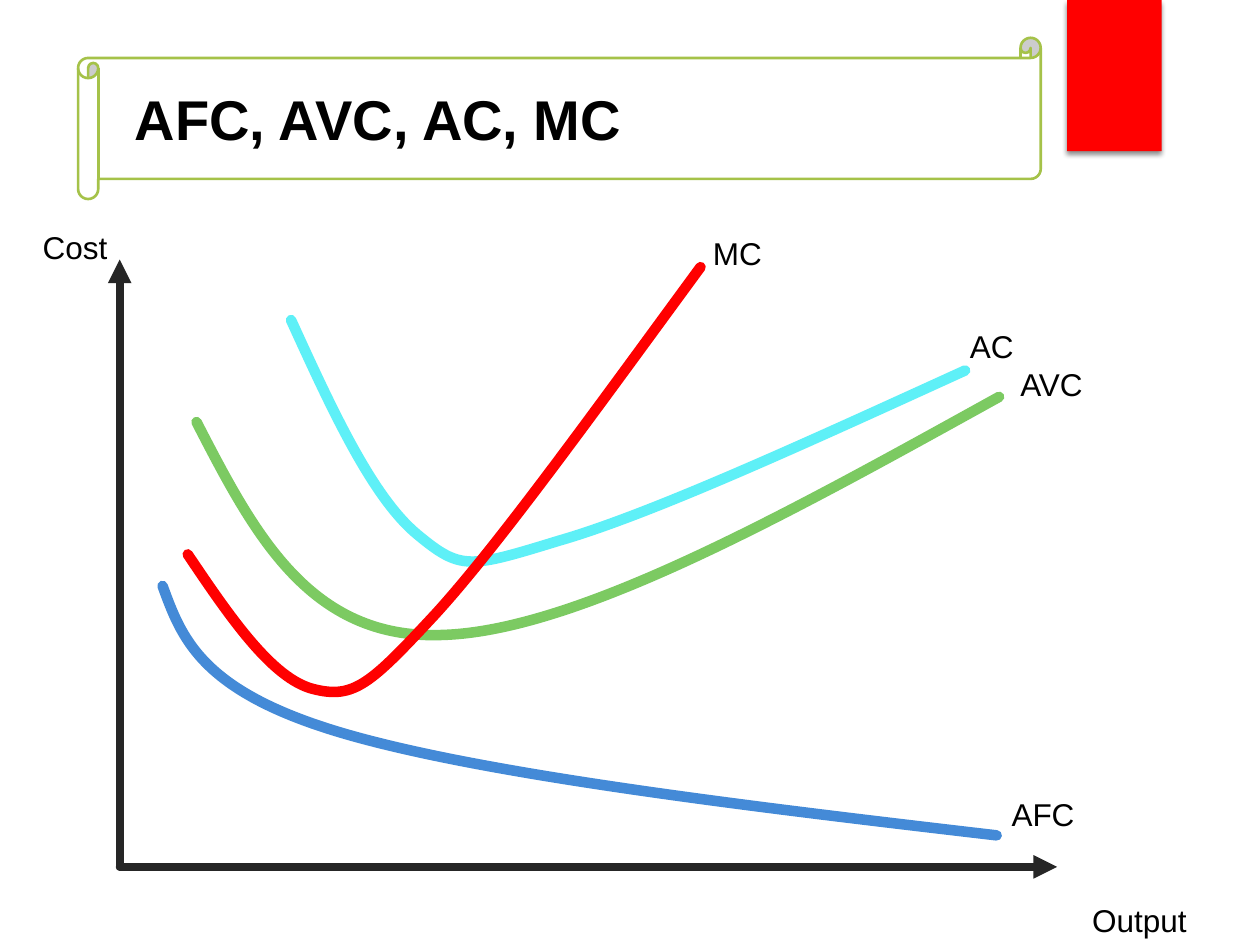
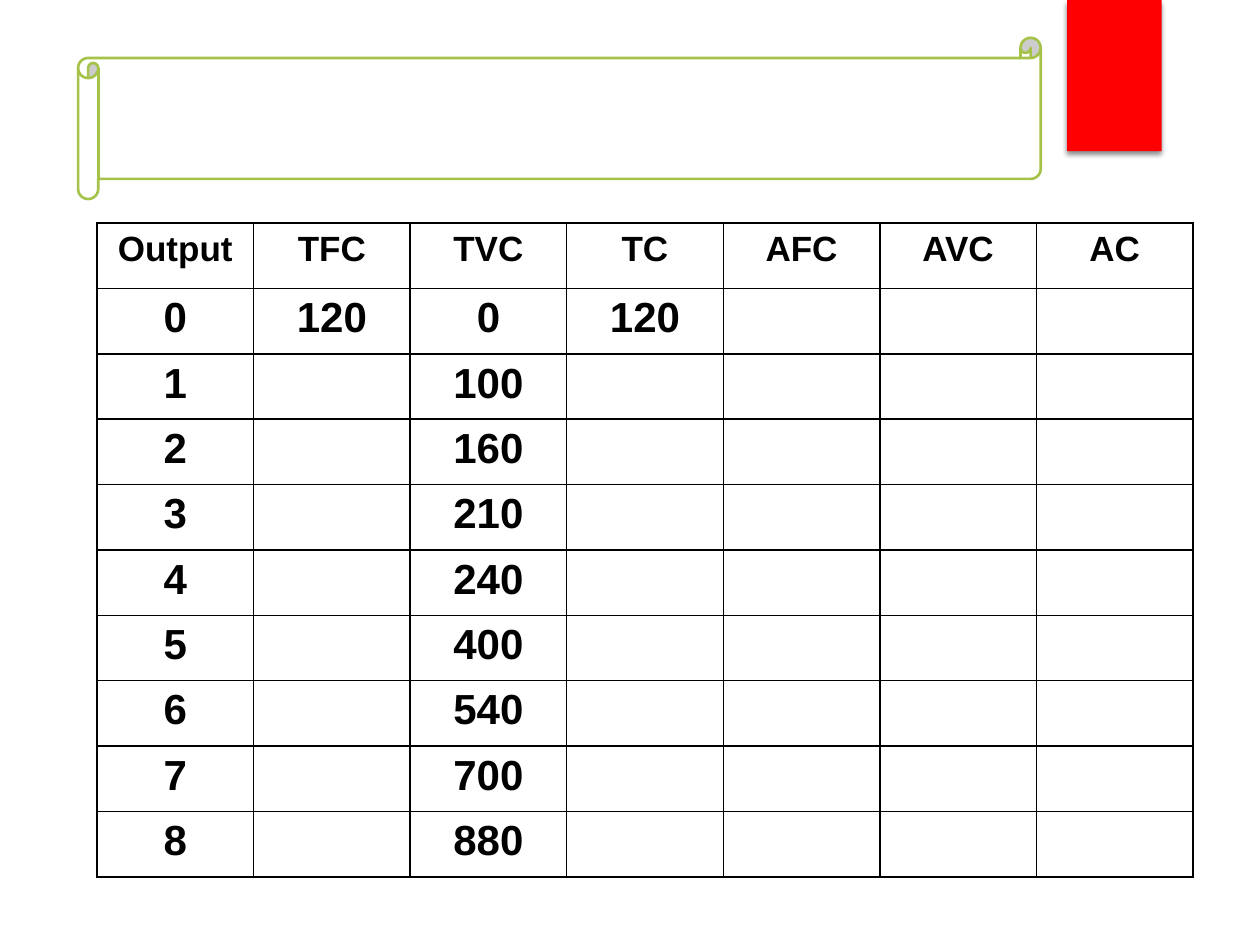
"""Build two slides on average and marginal cost: the curves and a table to fill in."""
import pptx
import pptx.util
import pptx.dml.color
import pptx.enum.shapes
import pptx.enum.text
import pptx.oxml
import lxml.etree
from pptx.oxml.ns import qn

WIDTH, HEIGHT = 10, 7.5
FONT = "Arial"
BLACK, WHITE, RED, GREEN, AXIS = "000000", "FFFFFF", "FF0000", "A5C249", "262626"
SCROLL = (0.62, 0.3, 7.64, 1.28)
RIBBON = (8.47, 0, 0.75, 1.2)

TITLE = "AFC, AVC, AC, MC"
TITLE_BOX = (0.97, 0.55, 6.94, 0.78)
ORIGIN = (0.95, 6.88)
AXIS_ENDS = [(0.95, 2.06), (8.39, 6.88)]
COST_CURVES = [
    ("448AD7", [(1.29, 4.65), (1.44, 5.06), (1.59, 5.48), (2.69, 5.81),
                (3.79, 6.14), (5.85, 6.39), (7.91, 6.63)]),
    ("7CCA62", [(1.56, 3.35), (2.01, 4.22), (2.45, 5.08), (3.51, 5.04),
                (4.58, 5.01), (6.25, 4.08), (7.93, 3.15)]),
    ("5EF0F7", [(2.31, 2.54), (2.63, 3.24), (2.95, 3.94), (3.31, 4.24),
                (3.66, 4.53), (3.72, 4.51), (4.44, 4.29),
                (5.17, 4.08), (6.41, 3.51), (7.66, 2.94)]),
    (RED, [(1.49, 4.4), (1.82, 4.89), (2.16, 5.39), (2.49, 5.47),
           (2.81, 5.55), (2.94, 5.43), (3.46, 4.87),
           (3.97, 4.31), (4.76, 3.21), (5.56, 2.12)]),
]
LABELS = [
    ("MC", 5.56, 1.81, 1.57), ("AC", 7.6, 2.55, 1.57), ("AVC", 8, 2.85, 1.57),
    ("AFC", 7.93, 6.26, 1.57), ("Output", 8.57, 7.1, 1.19), ("Cost", 0.24, 1.76, 1.06),
]

HEADERS = ["Output", "TFC", "TVC", "TC", "AFC", "AVC", "AC"]
TVC = [0, 100, 160, 210, 240, 400, 540, 700, 880]
FIXED_COST = 120
TABLE_BOX = (0.77, 1.77, 8.7, 5.19)


def inches(*lengths):
    return [pptx.util.Inches(v) for v in lengths]


def rgb(hex_code):
    return pptx.dml.color.RGBColor.from_string(hex_code)


def add_run(p, text, size, bold=False):
    r = p.add_run()
    r.text = text
    r.font.name = FONT
    r.font.size = pptx.util.Pt(size)
    r.font.bold = bold
    r.font.color.rgb = rgb(BLACK)


def set_line(line, color, width):
    line.color.rgb = rgb(color)
    line.width = pptx.util.Pt(width)


def add_panel(s, kind, box, fill):
    sp = s.shapes.add_shape(kind, *inches(*box))
    sp.shadow.inherit = False
    sp.fill.solid()
    sp.fill.fore_color.rgb = rgb(fill)
    sp.line.fill.background()
    return sp


def decorate_master(prs, s):
    shape_types = pptx.enum.shapes.MSO_SHAPE
    scroll = add_panel(s, shape_types.HORIZONTAL_SCROLL, SCROLL, WHITE)
    set_line(scroll.line, GREEN, 1.5)
    ribbon = add_panel(s, shape_types.RECTANGLE, RIBBON, RED)
    effects = ribbon.element.spPr.find(qn("a:effectLst"))
    shadow = lxml.etree.SubElement(effects, qn("a:outerShdw"), blurRad="38100",
                                   dist="25400", dir="5400000", rotWithShape="0")
    color = lxml.etree.SubElement(shadow, qn("a:srgbClr"), val=BLACK)
    lxml.etree.SubElement(color, qn("a:alpha"), val="45000")
    for i, sp in enumerate((scroll, ribbon)):
        sp.element.nvSpPr.cNvPr.set("id", str(101 + i))
        prs.slide_master.shapes.element.insert(2 + i, sp.element)


def add_title(s):
    sp = s.shapes.title
    sp.left, sp.top, sp.width, sp.height = inches(*TITLE_BOX)
    tf = sp.text_frame
    tf.vertical_anchor = pptx.enum.text.MSO_ANCHOR.MIDDLE
    p = tf.paragraphs[0]
    p.alignment = pptx.enum.text.PP_ALIGN.LEFT
    add_run(p, TITLE, 32, True)


def add_axis(s, end):
    straight = pptx.enum.shapes.MSO_CONNECTOR.STRAIGHT
    axis = s.shapes.add_connector(straight, *inches(*ORIGIN, *end))
    set_line(axis.line, AXIS, 4.5)
    ln = axis.element.spPr.find(qn("a:ln"))
    ln.set("cap", "rnd")
    lxml.etree.SubElement(ln, qn("a:round"))
    lxml.etree.SubElement(ln, qn("a:tailEnd"), type="triangle")
    lxml.etree.SubElement(axis.element.spPr, qn("a:effectLst"))


def add_curve(s, color, points):
    start, *rest = [inches(*point) for point in points]
    builder = s.shapes.build_freeform(*start, scale=1.0)
    builder.add_line_segments(rest, close=False)
    sp = builder.convert_to_shape()
    sp.shadow.inherit = False
    sp.fill.background()
    set_line(sp.line, color, 6)
    sp.element.spPr.find(qn("a:ln")).set("cap", "rnd")
    outline = sp.element.find(".//" + qn("a:path"))
    segments = outline.findall(qn("a:lnTo"))
    for i in range(0, len(segments), 3):
        bezier = lxml.etree.SubElement(outline, qn("a:cubicBezTo"))
        for segment in segments[i:i + 3]:
            bezier.append(segment[0])
            outline.remove(segment)


def add_label(s, text, left, top, width):
    tf = s.shapes.add_textbox(*inches(left, top, width, 0.4)).text_frame
    tf.word_wrap = True
    add_run(tf.paragraphs[0], text, 18)


def set_borders(cell):
    tcPr = cell._tc.get_or_add_tcPr()
    for i, side in enumerate(("a:lnL", "a:lnR", "a:lnT", "a:lnB")):
        ln = lxml.etree.Element(qn(side), w="12700")
        fill = lxml.etree.SubElement(ln, qn("a:solidFill"))
        lxml.etree.SubElement(fill, qn("a:srgbClr"), val=BLACK)
        tcPr.insert(i, ln)


def add_cost_table(s):
    rows = [HEADERS] + [[str(output), "", str(cost), "", "", "", ""]
                        for output, cost in enumerate(TVC)]
    rows[1][1] = rows[1][3] = str(FIXED_COST)
    left, top, width, height = inches(*TABLE_BOX)
    table = s.shapes.add_table(len(rows), len(HEADERS), left, top, width, height).table
    table.first_row = table.horz_banding = False
    for i, values in enumerate(rows):
        for j, text in enumerate(values):
            cell = table.cell(i, j)
            cell.fill.background()
            set_borders(cell)
            if text:
                p = cell.text_frame.paragraphs[0]
                p.alignment = pptx.enum.text.PP_ALIGN.CENTER
                add_run(p, text, 24 if i else 20, True)


def main():
    prs = pptx.Presentation()
    prs.slide_width, prs.slide_height = inches(WIDTH, HEIGHT)

    s = prs.slides.add_slide(prs.slide_layouts[5])
    decorate_master(prs, s)
    add_title(s)
    for end in AXIS_ENDS:
        add_axis(s, end)
    for color, points in COST_CURVES:
        add_curve(s, color, points)
    for label in LABELS:
        add_label(s, *label)

    s = prs.slides.add_slide(prs.slide_layouts[6])
    add_cost_table(s)
    prs.save("out.pptx")


if __name__ == "__main__":
    main()
